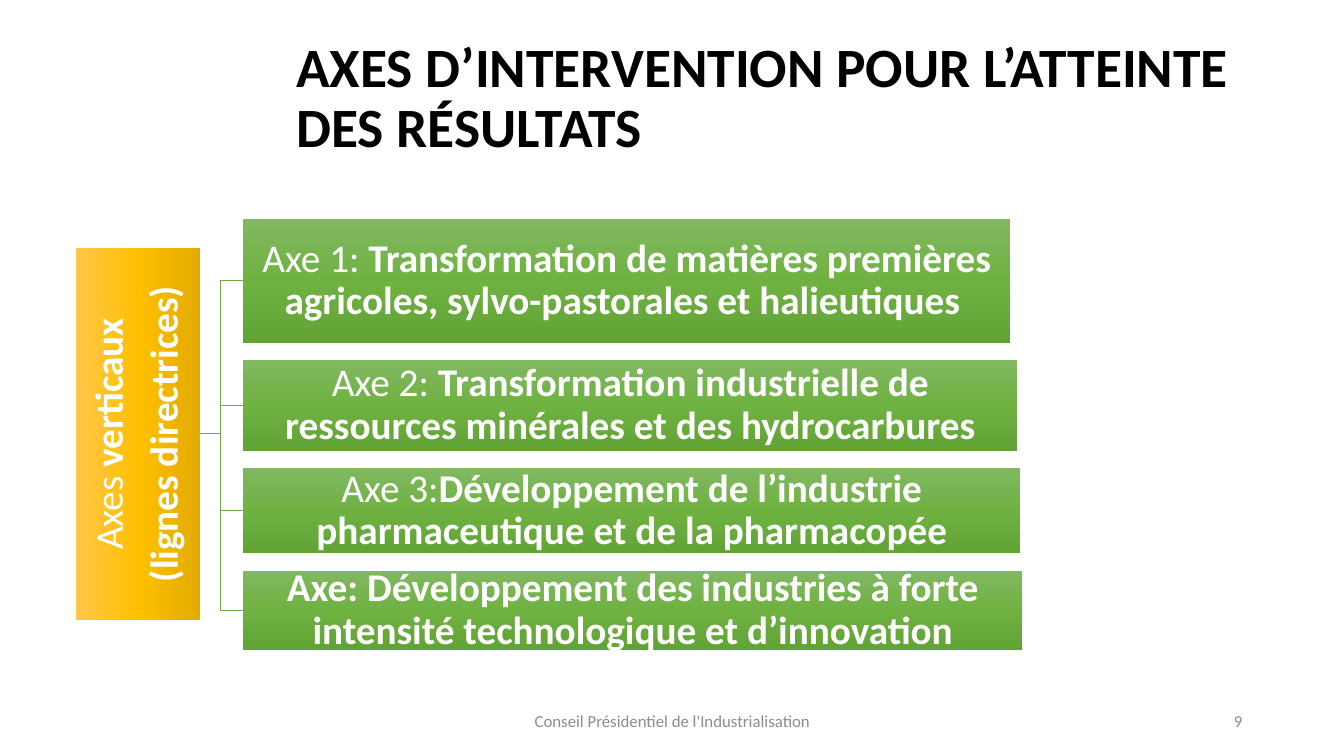
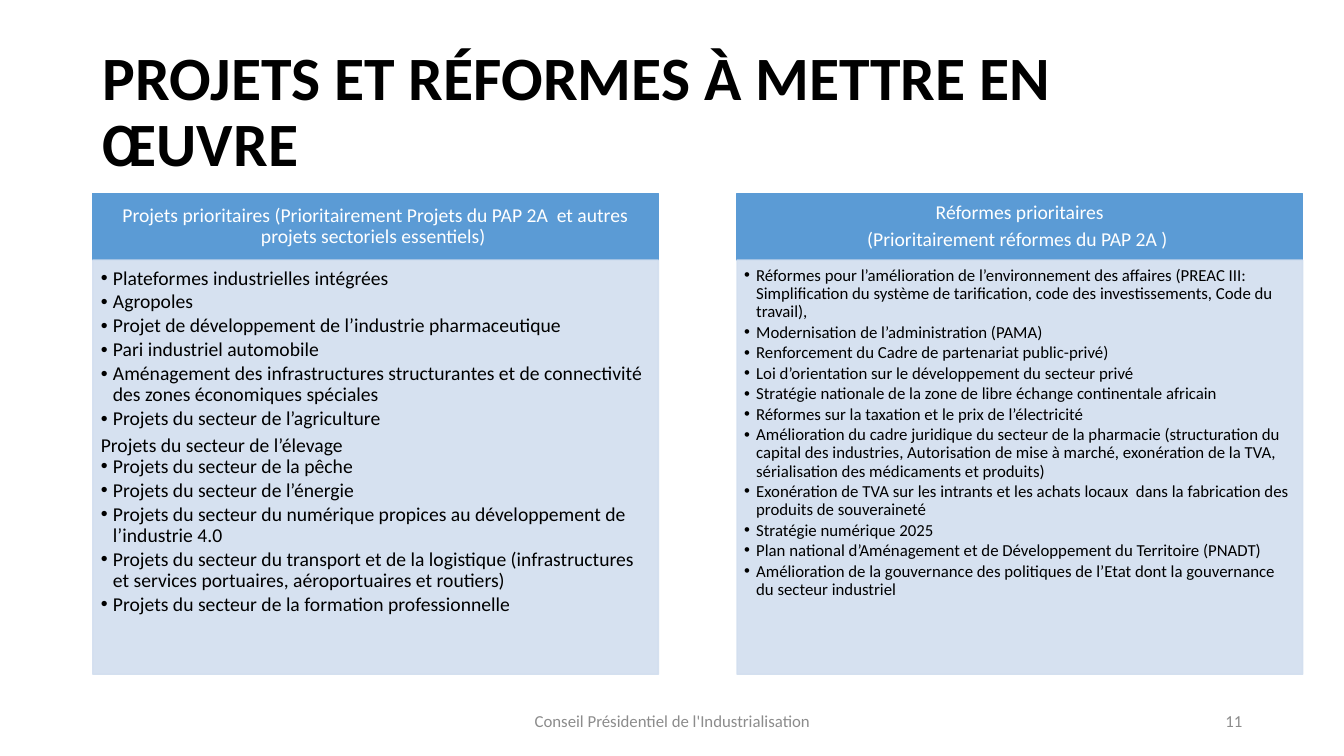
from lxml.etree import SubElement
from pptx import Presentation
from pptx.dml.color import RGBColor
from pptx.enum.shapes import MSO_SHAPE
from pptx.enum.text import MSO_ANCHOR, MSO_AUTO_SIZE, PP_ALIGN
from pptx.oxml.ns import qn
from pptx.util import Inches, Pt

FONT = "Calibri"
BLACK = RGBColor(0x00, 0x00, 0x00)
WHITE = RGBColor(0xFF, 0xFF, 0xFF)
GREY = RGBColor(0x8C, 0x8C, 0x8C)
GREEN = RGBColor(0x70, 0xAD, 0x47)
BLUE = RGBColor(0x5B, 0x9B, 0xD5)
PALE_BLUE = RGBColor(0xD2, 0xDE, 0xEF)
GOLD_STOPS = [RGBColor(0xFF, 0xC6, 0x4B), RGBColor(0xFF, 0xC0, 0x00), RGBColor(0xE3, 0xAB, 0x00)]
GREEN_STOPS = [RGBColor(0x81, 0xB8, 0x61), RGBColor(0x6F, 0xB2, 0x42), RGBColor(0x62, 0xA3, 0x36)]
FOOTER = "Conseil Présidentiel de l'Industrialisation"


def place(shape, left, top, width, height):
    shape.left, shape.top = Inches(left), Inches(top)
    shape.width, shape.height = Inches(width), Inches(height)


def style_text(shape, size, color, align, anchor=MSO_ANCHOR.MIDDLE, spacing=0.9, after=0.0, margins=None):
    """Format all the text of a shape; after is in font sizes, margins are left, top, right, bottom."""
    frame = shape.text_frame
    frame.word_wrap = True
    frame.auto_size = MSO_AUTO_SIZE.NONE
    frame.vertical_anchor = anchor
    if margins:
        frame.margin_left, frame.margin_top, frame.margin_right, frame.margin_bottom = map(Inches, margins)
    for para in frame.paragraphs:
        para.alignment = align
        para.line_spacing = spacing
        para.space_before = Pt(0)
        para.space_after = Pt(size * after)
        for span in para.runs:
            span.font.name = FONT
            span.font.size = Pt(size)
            span.font.color.rgb = color


deck = Presentation()
deck.slide_width, deck.slide_height = Inches(13.33), Inches(7.5)
axes_page = deck.slides.add_slide(deck.slide_layouts.get_by_name("Title Only"))
projects_page = deck.slides.add_slide(deck.slide_layouts.get_by_name("Comparison"))

# Titles and footers
pages = [
    (axes_page, "AXES D’INTERVENTION POUR L’ATTEINTE DES RÉSULTATS", 39.6,
     (2.84, 0.68, 9.75, 1.21), (0.1, 0.05, 0.1, 0.65), "9"),
    (projects_page, "PROJETS ET RÉFORMES À METTRE EN ŒUVRE", 44,
     (0.92, 0.4, 11.5, 1.45), (0.1, 0.05, 0.1, 0.05), "11"),
]
for page, title_text, size, area, margins, number in pages:
    title = page.shapes.title
    place(title, *area)
    title.text_frame.text = title_text
    style_text(title, size, BLACK, PP_ALIGN.LEFT, margins=margins)
    title.text_frame.paragraphs[0].runs[0].font.bold = True
    for text, left, width, align in [(FOOTER, 4.42, 4.5, PP_ALIGN.CENTER),
                                     (number, 9.42, 3, PP_ALIGN.RIGHT)]:
        box = page.shapes.add_textbox(Inches(left), Inches(6.95), Inches(width), Inches(0.4))
        box.text_frame.text = text
        style_text(box, 12, GREY, align, spacing=1.0)

# Axes: a root block, branches and one block per axis
AXIS_LEFT, AXIS_GAP = 2.41, 0.17
ROOT_RIGHT, BRANCH_X, ROOT_Y = 1.98, 2.19, 4.3
axes = [
    (7.61, 1.23, "Axe 1: ",
     "Transformation de matières premières agricoles, sylvo-pastorales et halieutiques "),
    (7.68, 0.9, "Axe 2: ",
     "Transformation industrielle de ressources minérales et des hydrocarbures"),
    (7.71, 0.85, "Axe 3:",
     "Développement de l’industrie pharmaceutique et de la pharmacopée"),
    (7.73, 0.79, "",
     "Axe: Développement des industries à forte intensité technologique et d’innovation"),
]
blocks = [((-0.48, 3.69, 3.69, 1.23), 270, GOLD_STOPS,
           [("Axes ", "verticaux"), ("", "(lignes directrices)")])]
top = 2.17
for width, height, lead, subject in axes:
    blocks.append(((AXIS_LEFT, top, width, height), 0, GREEN_STOPS, [(lead, subject)]))
    middle = top + height / 2
    builder = axes_page.shapes.build_freeform(Inches(ROOT_RIGHT), Inches(ROOT_Y))
    builder.add_line_segments([(Inches(x), Inches(y)) for x, y in
                               [(BRANCH_X, ROOT_Y), (BRANCH_X, middle), (AXIS_LEFT, middle)]],
                              close=False)
    branch = builder.convert_to_shape()
    branch.shadow.inherit = False
    branch.fill.background()
    branch.line.color.rgb = GREEN
    branch.line.width = Pt(1)
    top += height + AXIS_GAP

for area, rotation, stops, lines in blocks:
    block = axes_page.shapes.add_shape(MSO_SHAPE.RECTANGLE, *map(Inches, area))
    block.rotation = rotation
    block.shadow.inherit = False
    block.line.fill.background()
    block.fill.gradient()
    block.fill.gradient_angle = 270
    stop_list = block._element.spPr.find(".//" + qn("a:gsLst"))
    stop_list.clear()
    for index, color in enumerate(stops):
        stop = SubElement(stop_list, qn("a:gs"), pos=str(index * 50000))
        SubElement(stop, qn("a:srgbClr"), val=str(color))
    for index, (lead, subject) in enumerate(lines):
        frame = block.text_frame
        para = frame.add_paragraph() if index else frame.paragraphs[0]
        for text, bold in [(lead, False), (subject, True)]:
            if text:
                span = para.add_run()
                span.text = text
                span.font.bold = bold
    style_text(block, 28, WHITE, PP_ALIGN.CENTER, after=0.32, margins=(0.02,) * 4)

# Projects and reforms: two columns, each with a header and a list
COLUMN_WIDTH = 5.61
UNBULLETED = "Projets du secteur de l’élevage"
projects = [
    "Plateformes industrielles intégrées",
    "Agropoles",
    "Projet de développement de l’industrie pharmaceutique",
    "Pari industriel automobile",
    "Aménagement des infrastructures structurantes et de connectivité des zones économiques spéciales",
    "Projets du secteur de l’agriculture",
    UNBULLETED,
    "Projets du secteur de la pêche",
    "Projets du secteur de l’énergie",
    "Projets du secteur du numérique propices au développement de l’industrie 4.0",
    "Projets du secteur du transport et de la logistique (infrastructures et services portuaires, "
    "aéroportuaires et routiers)",
    "Projets du secteur de la formation professionnelle",
]
reforms = [
    "Réformes pour l’amélioration de l’environnement des affaires (PREAC III: Simplification du "
    "système de tarification, code des investissements, Code du travail),",
    "Modernisation de l’administration (PAMA)",
    "Renforcement du Cadre de partenariat public-privé)",
    "Loi d’orientation sur le développement du secteur privé",
    "Stratégie nationale de la zone de libre échange continentale africain",
    "Réformes sur la taxation et le prix de l’électricité",
    "Amélioration du cadre juridique du secteur de la pharmacie (structuration du capital des "
    "industries, Autorisation de mise à marché, exonération de la TVA, sérialisation des "
    "médicaments et produits)",
    "Exonération de TVA sur les intrants et les achats locaux  dans la fabrication des produits "
    "de souveraineté",
    "Stratégie numérique 2025",
    "Plan national d’Aménagement et de Développement du Territoire (PNADT)",
    "Amélioration de la gouvernance des politiques de l’Etat dont la gouvernance du secteur industriel",
]
columns = [
    (0.92, 1, ["Projets prioritaires (Prioritairement Projets du PAP 2A  et autres projets "
               "sectoriels essentiels) "], projects, 14, (0.08, 0.08, 0.11, 0.12)),
    (7.31, 3, ["Réformes prioritaires", "(Prioritairement réformes du PAP 2A ) "],
     reforms, 12, (0.07, 0.07, 0.09, 0.1)),
]
placeholders = {holder.placeholder_format.idx: holder for holder in projects_page.placeholders}
for left, holder_index, heading, items, size, margins in columns:
    header, panel = placeholders[holder_index], placeholders[holder_index + 1]
    place(header, left, 1.92, COLUMN_WIDTH, 0.66)
    place(panel, left, 2.58, COLUMN_WIDTH, 4.11)
    for box, color, lines in [(header, BLUE, heading), (panel, PALE_BLUE, items)]:
        box.fill.solid()
        box.fill.fore_color.rgb = color
        box.line.color.rgb = color
        box.line.width = Pt(1)
        box.text_frame.text = "\n".join(lines)
    style_text(header, 14, WHITE, PP_ALIGN.CENTER, after=0.32, margins=(0.11, 0.06, 0.11, 0.06))
    for para in header.text_frame.paragraphs:
        para.runs[0].font.bold = False

    for color in panel._element.spPr.iter(qn("a:srgbClr")):
        SubElement(color, qn("a:alpha"), val="90000")
    style_text(panel, size, BLACK, PP_ALIGN.LEFT, MSO_ANCHOR.TOP, after=0.14, margins=margins)
    for para in panel.text_frame.paragraphs:
        bulleted = para.text != UNBULLETED
        indent = Inches(0.12) if bulleted else 0
        properties = para._p.get_or_add_pPr()
        properties.set("marL", str(indent))
        properties.set("indent", str(-indent))
        if bulleted:
            SubElement(properties, qn("a:buChar"), char="•")
        else:
            para.line_spacing = 1.0
            para.space_after = Pt(0)
            SubElement(properties, qn("a:buNone"))

deck.save("out.pptx")
